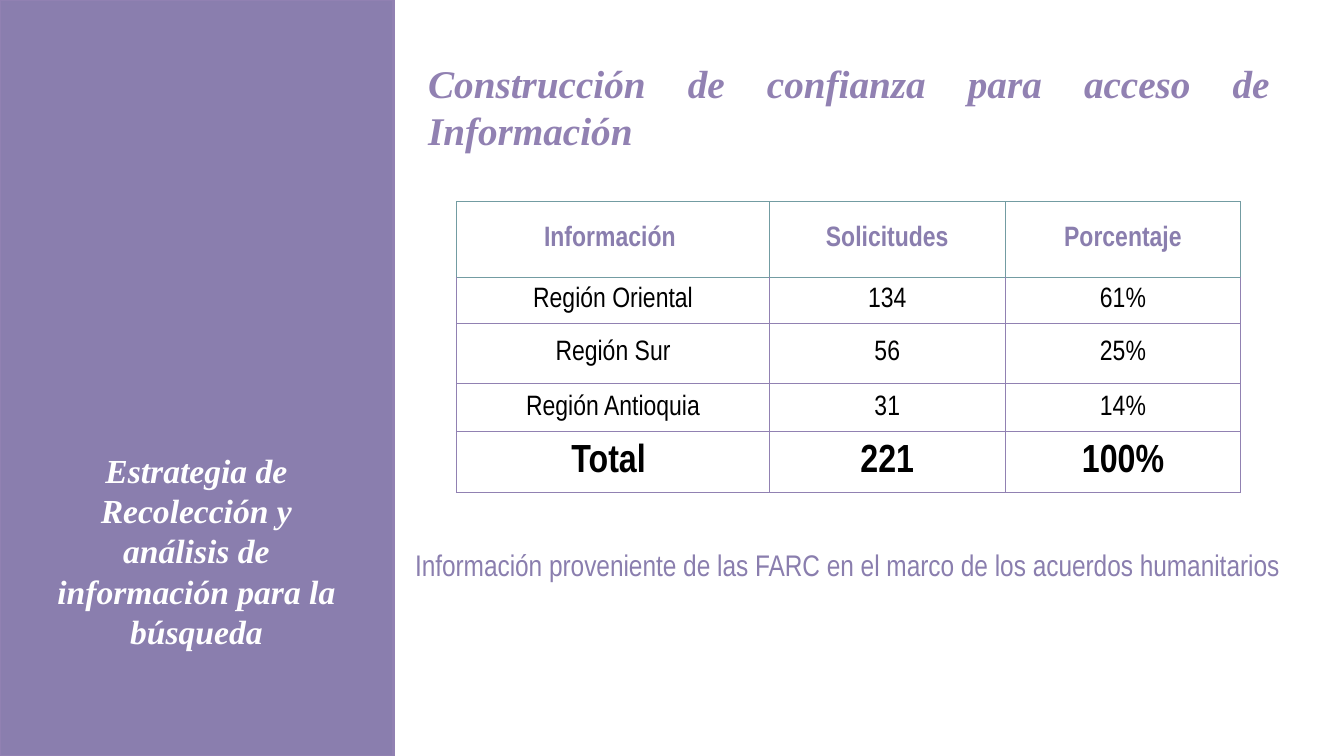
from lxml import etree
from pptx import Presentation
from pptx.dml.color import RGBColor
from pptx.enum.shapes import MSO_SHAPE
from pptx.enum.text import MSO_ANCHOR, PP_ALIGN
from pptx.oxml.ns import qn
from pptx.util import Cm, Pt

RECT = MSO_SHAPE.RECTANGLE
TOP, MIDDLE = MSO_ANCHOR.TOP, MSO_ANCHOR.MIDDLE
CENTER, JUSTIFY = PP_ALIGN.CENTER, PP_ALIGN.JUSTIFY
PURPLE = RGBColor(0x8A, 0x7E, 0xAE)
LILAC = RGBColor(0x91, 0x81, 0xB2)
TEAL = RGBColor(0x73, 0x9C, 0xA2)
BLACK = RGBColor(0, 0, 0)
WHITE = RGBColor(0xFF, 0xFF, 0xFF)
SERIF, NARROW = "Times New Roman", "Arial Narrow"


def write(frame, text, align, face, size, color, bold=False, italic=False):
    para = frame.paragraphs[0]
    para.alignment = align
    run = para.add_run()
    run.text = text
    font = run.font
    font.name, font.size, font.bold, font.italic = face, Pt(size), bold, italic
    font.color.rgb = color


def border(cell, colors):
    """Draw the four cell edges; colors maps L, R, T and B to a colour."""
    props = cell._tc.get_or_add_tcPr()
    for index, (side, color) in enumerate(colors.items()):
        line = etree.Element(qn("a:ln" + side), w=str(Pt(0.75)))
        fill = etree.SubElement(line, qn("a:solidFill"))
        etree.SubElement(fill, qn("a:srgbClr"), val=str(color))
        props.insert(index, line)


deck = Presentation()
deck.slide_width, deck.slide_height = Cm(33.87), Cm(19.05)
slide = deck.slides.add_slide(deck.slide_layouts[6])
shapes = slide.shapes

# Side panel
panel = shapes.add_shape(RECT, 0, 0, Cm(9.91), deck.slide_height)
panel.shadow.inherit = False
panel.fill.solid()
panel.fill.fore_color.rgb = PURPLE
panel.line.color.rgb = LILAC
panel.line.width = Pt(2)

# Table of requests by region
rows = [
    ("Información ", "Solicitudes", "Porcentaje"),
    ("Región Oriental", "134", "61%"),
    ("Región Sur", "56", "25%"),
    ("Región Antioquia", "31", "14%"),
    ("Total ", "221", "100%"),
]
widths = [7.88, 5.94, 5.94]
heights = [1.91, 1.16, 1.52, 1.21, 1.53]
table = shapes.add_table(len(rows), len(widths), Cm(11.51), Cm(5.08),
                         Cm(sum(widths)), Cm(sum(heights))).table
table.first_row = table.horz_banding = False
for column, width in zip(table.columns, widths):
    column.width = Cm(width)

last = len(rows) - 1
for r, (texts, height) in enumerate(zip(rows, heights)):
    table.rows[r].height = Cm(height)
    edge = TEAL if r == 0 else LILAC
    upper = TEAL if r <= 1 else LILAC
    for c, text in enumerate(texts):
        cell = table.cell(r, c)
        cell.vertical_anchor = MIDDLE
        cell.fill.solid()
        cell.fill.fore_color.rgb = WHITE
        border(cell, {"L": edge, "R": edge, "T": upper, "B": edge})
        write(cell.text_frame, text, CENTER, NARROW, 28 if r == last else 20,
              PURPLE if r == 0 else BLACK, bold=r in (0, last))

# Heading, panel title and note
labels = [
    ((10.13, 13.61, 23.04, 1.24), TOP,
     "Información proveniente de las FARC en el marco de los acuerdos humanitarios",
     JUSTIFY, NARROW, 21.3, PURPLE, False, False),
    ((0.86, 12.98, 8.18, 1.78), MIDDLE,
     "Estrategia de Recolección y análisis de información para la búsqueda",
     CENTER, SERIF, 24, WHITE, True, True),
    ((10.46, 1.78, 21.87, 1.78), MIDDLE,
     "Construcción de confianza para acceso de Información",
     JUSTIFY, SERIF, 28, LILAC, True, True),
]
for place, anchor, *style in labels:
    frame = shapes.add_textbox(*map(Cm, place)).text_frame
    frame.word_wrap = True
    frame.vertical_anchor = anchor
    frame.margin_left = frame.margin_right = Cm(0.33)
    frame.margin_top = frame.margin_bottom = Cm(0.17)
    write(frame, *style)

deck.save("out.pptx")
